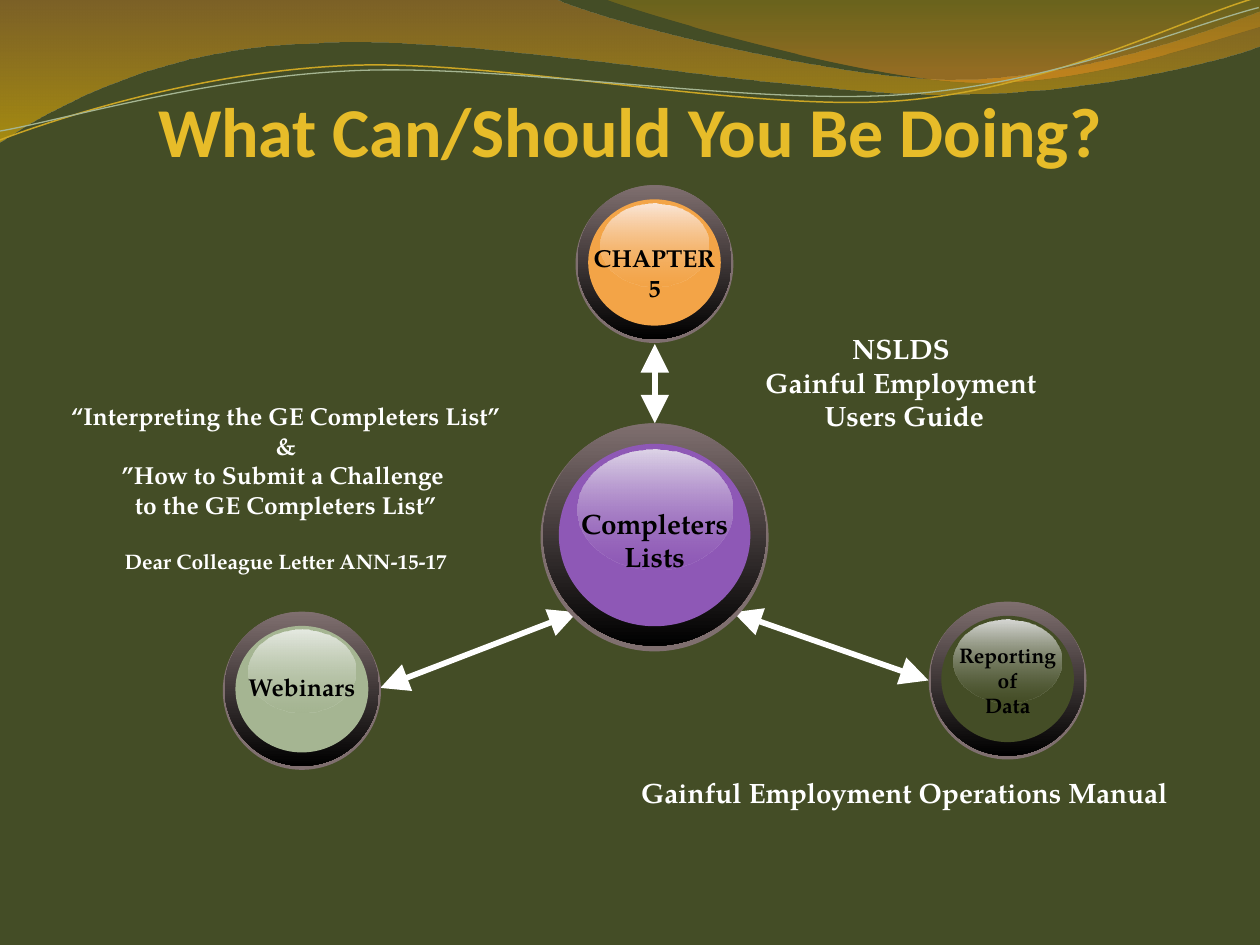
from dataclasses import dataclass

from lxml.etree import SubElement
from pptx import Presentation
from pptx.dml.color import RGBColor
from pptx.enum.shapes import MSO_CONNECTOR, MSO_SHAPE
from pptx.enum.text import MSO_ANCHOR, PP_ALIGN
from pptx.oxml.ns import qn
from pptx.util import Pt

SERIF = "TeX Gyre Pagella"
WHITE, BLACK, BEZEL, OLIVE = "FFFFFF", "000000", "7F6F6F", "444D26"


@dataclass
class Stop:
    position: float
    color: str
    opacity: int = 100


@dataclass
class Wave:
    start: tuple
    segments: list
    fill: tuple = ()
    line: str = ""
    width: float = 0


@dataclass
class Orb:
    left: float
    top: float
    size: float
    color: str
    shine: str
    lines: list
    font_size: float
    label_top: float
    label_height: float


@dataclass
class Note:
    left: float
    top: float
    width: float
    height: float
    lines: list
    font_size: float


@dataclass
class Arrow:
    start: tuple
    end: tuple


WAVES = [
    Wave((-0.7, 0), [
        ((316.8, -0.7),),
        ((342.7, 12.2), (478.1, 45.4), (545.8, 45.4)),
        ((614.2, 45.4), (689.8, 18.7), (720, 6.5)),
        ((720.7, 25.9),),
        ((707.8, 31.7), (626.4, 54.7), (537.1, 54)),
        ((447.8, 54), (275, 20.2), (185, 24.5)),
        ((92.9, 25.9), (33.1, 59.8), (-0.7, 81.4)),
    ], fill=(Stop(0, "C07A28", 45), Stop(1, "F7BF00", 55))),
    Wave((344.9, -0.7), [
        ((366.5, 7.9), (491, 44.6), (553.7, 46.8)),
        ((616.3, 49.7), (691.9, 23), (720, 15.1)),
        ((720, 0),),
    ], fill=(Stop(0, "C09709", 30), Stop(0.8, "F59320", 45))),
    Wave((-1.4, 63), [
        ((33.8, 51.7), (114.1, 29.4), (199.8, 29.9)),
        ((284.8, 30.3), (425.8, 67.3), (512.4, 64.9)),
        ((599, 62.4), (676.5, 25.7), (720.2, 15.5)),
    ], line="CCA624", width=0.85),
    Wave((-1.4, 58), [
        ((32.9, 53.8), (118.3, 32.5), (204.1, 33)),
        ((290.6, 33.4), (428.9, 63.8), (515.5, 61.4)),
        ((601.4, 59.6), (678.4, 30.1), (720.7, 21.3)),
    ], line="A5B592", width=0.75),
]

ARROWS = [
    Arrow((217.4, 393.1), (329.8, 349.9)),
    Arrow((530.6, 388.8), (419, 349.9)),
    Arrow((374.2, 241.9), (374.2, 196.6)),
]

NOTES = [
    Note(30.2, 225.8, 266.4, 106.6, [
        "“Interpreting the GE Completers List”", "&",
        "”How to Submit a Challenge ", "to the GE Completers List”",
        "Dear Colleague Letter ANN-15-17"], 14),
    Note(356, 439.9, 321.8, 26.6, ["Gainful Employment Operations Manual"], 16),
    Note(428.6, 186, 176.4, 65.5,
         ["NSLDS ", "Gainful Employment ", "Users Guide"], 16),
]

ORBS = [
    Orb(308.9, 241.9, 130.3, "8E58B6", "DDD4E7", ["Completers", "Lists"], 16, 285.8, 46),
    Orb(328.9, 105.8, 90.2, "F3A447", "FBE6D8", ["CHAPTER", "5"], 14, 135.4, 41),
    Orb(127.3, 349.5, 90.4, "A5B592", "E6EAE2", ["Webinars"], 14, 380.5, 24.5),
    Orb(530.7, 343.8, 90.2, OLIVE, "D8D9D6", ["Reporting", "of", "Data"], 12, 363.6, 51),
]


def rgb(color: str) -> RGBColor:
    return RGBColor.from_string(color)


def paint(shape, *stops: Stop) -> None:
    shape.shadow.inherit = False
    shape.line.fill.background()
    if len(stops) == 1:
        shape.fill.solid()
        shape.fill.fore_color.rgb = rgb(stops[0].color)
        return
    shape.fill.gradient()
    shape.fill.gradient_angle = 270
    for target, stop in zip(shape.fill.gradient_stops, stops):
        target.position = stop.position
        target.color.rgb = rgb(stop.color)
    colors = shape._element.spPr.find(qn("a:gradFill")).iter(qn("a:srgbClr"))
    for element, stop in zip(colors, stops):
        if stop.opacity < 100:
            SubElement(element, qn("a:alpha")).set("val", str(stop.opacity * 1000))


def bend(shape, segments: list) -> None:
    lines = iter(list(shape._element.iter(qn("a:lnTo"))))
    for segment in segments:
        first, *others = [next(lines) for _ in segment]
        if others:
            curve = first.makeelement(qn("a:cubicBezTo"))
            first.addprevious(curve)
            for line in (first, *others):
                curve.append(line[0])
                line.getparent().remove(line)


def draw_wave(s, wave: Wave) -> None:
    builder = s.shapes.build_freeform(Pt(wave.start[0]), Pt(wave.start[1]))
    points = [(Pt(x), Pt(y)) for segment in wave.segments for x, y in segment]
    builder.add_line_segments(points, close=False)
    sp = builder.convert_to_shape()
    bend(sp, wave.segments)
    if wave.fill:
        paint(sp, *wave.fill)
    else:
        sp.shadow.inherit = False
        sp.fill.background()
        sp.line.color.rgb = rgb(wave.line)
        sp.line.width = Pt(wave.width)
        sp.rotation = 357.3


def draw_arrow(s, arrow: Arrow) -> None:
    ends = [Pt(v) for v in arrow.start + arrow.end]
    sp = s.shapes.add_connector(MSO_CONNECTOR.STRAIGHT, *ends)
    sp.line.color.rgb = rgb(WHITE)
    sp.line.width = Pt(3.25)
    for tag in ("a:headEnd", "a:tailEnd"):
        head = SubElement(sp._element.spPr.find(qn("a:ln")), qn(tag))
        for key, value in (("type", "triangle"), ("w", "lg"), ("len", "lg")):
            head.set(key, value)
    SubElement(sp._element.spPr, qn("a:effectLst"))


def add_text(shapes, box: tuple, lines: list, size: float, color: str,
             font: str = SERIF, wrap: bool = True):
    tf = shapes.add_textbox(*[Pt(v) for v in box]).text_frame
    tf.word_wrap = wrap
    for i, line in enumerate(lines):
        p = tf.add_paragraph() if i else tf.paragraphs[0]
        p.text = line
        p.alignment = PP_ALIGN.CENTER
        p.font.name = font
        p.font.size = Pt(size)
        p.font.bold = True
        p.font.color.rgb = rgb(color)
    return tf


def draw_orb(s, orb: Orb) -> None:
    shapes = s.shapes.add_group_shape().shapes
    layers = [
        (1, 1, 0, [Stop(0, BEZEL)]),
        (0.975, 0.975, 0, [Stop(0, BEZEL), Stop(1, BLACK)]),
        (0.84, 0.8, 0.09, [Stop(0, orb.color)]),
        (0.68, 0.525, 0.115, [Stop(0, orb.shine), Stop(1, orb.color, 37)]),
    ]
    for width, height, drop, stops in layers:
        box = (orb.left + orb.size * (1 - width) / 2, orb.top + orb.size * drop,
               orb.size * width, orb.size * height)
        paint(shapes.add_shape(MSO_SHAPE.OVAL, *[Pt(v) for v in box]), *stops)
    add_text(shapes, (orb.left, orb.label_top, orb.size, orb.label_height),
             orb.lines, orb.font_size, BLACK)


def main() -> None:
    prs = Presentation()
    prs.slide_width, prs.slide_height = Pt(720), Pt(540)
    s = prs.slides.add_slide(prs.slide_layouts[6])
    s.background.fill.solid()
    s.background.fill.fore_color.rgb = rgb(OLIVE)
    for wave in WAVES:
        draw_wave(s, wave)
    for arrow in ARROWS:
        draw_arrow(s, arrow)
    for note in NOTES:
        tf = add_text(s.shapes, (note.left, note.top, note.width, note.height),
                      note.lines, note.font_size, WHITE, wrap=False)
        if note is NOTES[0]:
            tf.paragraphs[-1].font.size = Pt(12)
            tf.paragraphs[-1].space_before = Pt(17)
    for orb in ORBS:
        draw_orb(s, orb)
    title = add_text(s.shapes, (73.8, 54, 572.4, 40.3),
                     ["What Can/Should You Be Doing?"], 40, "E7BC29", "Calibri")
    title.vertical_anchor = MSO_ANCHOR.MIDDLE
    prs.save("out.pptx")


if __name__ == "__main__":
    main()
